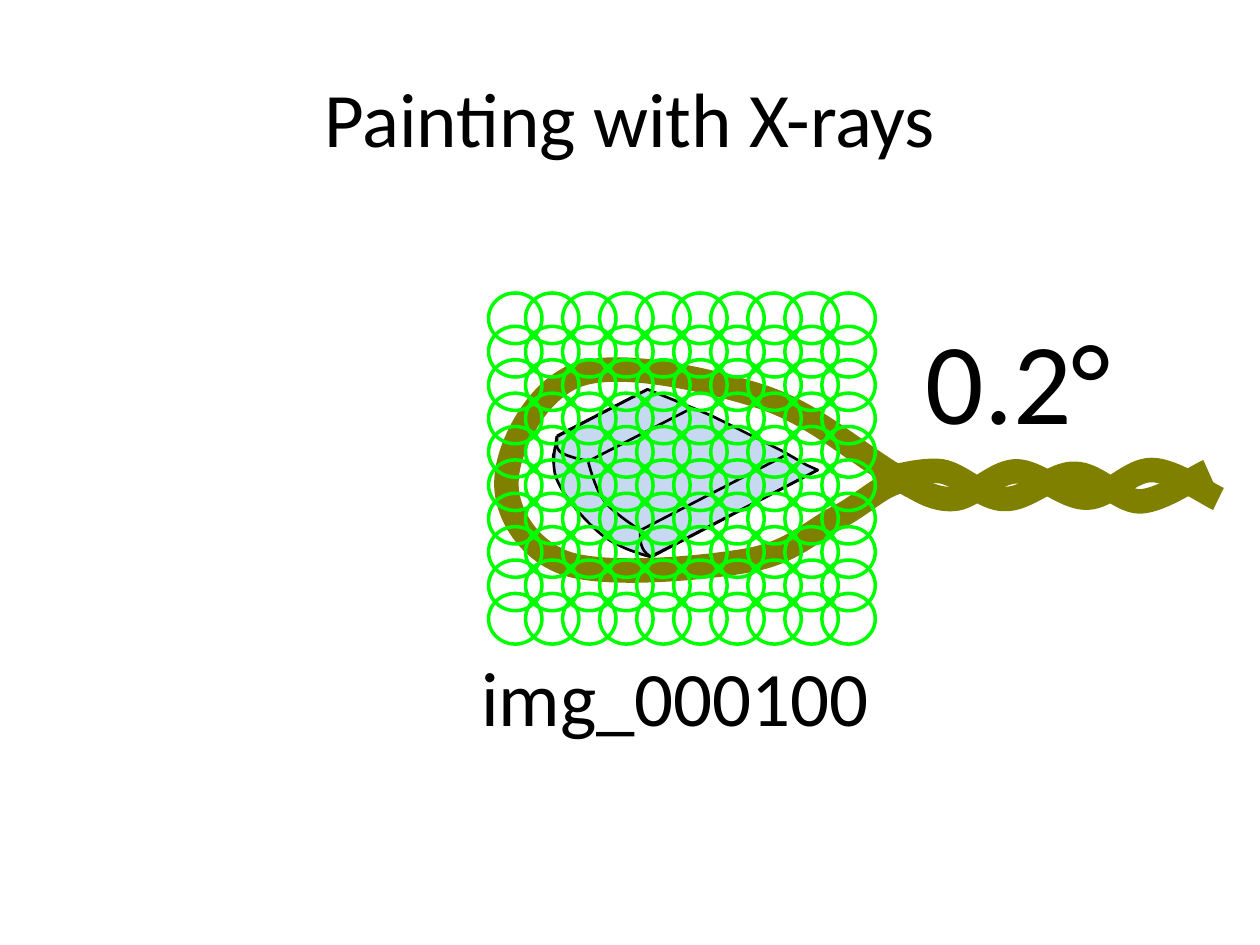
from itertools import product
from math import cos, radians, sin

from lxml.etree import SubElement
from pptx import Presentation
from pptx.dml.color import RGBColor
from pptx.enum.shapes import MSO_CONNECTOR, MSO_SHAPE
from pptx.enum.text import MSO_ANCHOR, MSO_AUTO_SIZE, PP_ALIGN
from pptx.oxml.ns import qn
from pptx.util import Inches, Pt

COLS = 100  # square cells, 100 across and 75 down
BLACK, ICE, ROPE, BEAM = "000000", "C6D9F1", "808000", "00FF00"
TILT, FLIP = 227.7, 180

FACE = [
    (64.9, 37.3), (51.7, 44.2), (51, 44), (49.9, 43.6), (48.7, 43), (47.6, 42.2),
    (46.5, 41.2), (45.3, 39.9), (44.6, 38.8), (44.1, 37.8), (44, 37.1), (43.9, 36.2),
    (44.1, 35.4), (44.3, 34.6), (51.4, 30.9), (54.1, 32), (56.5, 33), (59.1, 34.3),
    (62.1, 35.8), (64, 36.9),
]
EDGES = [
    ((64.9, 37.3), (51.6, 44.2)), ((62.4, 36.1), (50.8, 42.1)),
    ((54.9, 32.4), (46.7, 36.6)), ((51.4, 30.9), (44.2, 34.6)),
]
# A curve is a start point, then two handles and an end point per piece.
RIMS = [
    [(51.7, 44.2), (50.3, 43.8), (49, 43.4), (47.7, 42.4), (46.5, 41.4), (44.9, 39.6),
     (44.3, 38.3), (43.7, 37.1), (44, 35.8), (44.2, 34.6)],
    [(51.7, 44.2), (51.5, 44.1), (51.1, 43.8), (51, 43.5), (50.8, 43.2), (50.8, 42.4),
     (50.8, 42.1)],
    [(50.8, 42.1), (50.3, 41.7), (48.7, 40.7), (48, 39.8), (47.3, 38.9), (46.9, 37.4),
     (46.7, 36.7)],
    [(46.7, 36.6), (46.3, 36.5), (44.8, 36.2), (44.4, 35.8), (44, 35.5), (44.3, 34.8),
     (44.2, 34.6)],
]
LOOP = [
    (72.4, 38.6), (67.6, 35.8), (64.9, 33), (60.5, 31.5), (56.1, 30.1), (49.4, 28.6),
    (46, 29.7), (42.6, 30.8), (40.3, 35.5), (40.2, 38), (40, 40.5), (41.8, 43.6),
    (44.9, 44.7), (48.1, 45.8), (55.7, 45.1), (59.2, 44.5), (62.8, 43.9), (64.3, 42.2),
    (66.4, 41.1), (68.4, 40.1), (69.9, 38.5), (71.4, 38.2), (73, 37.9), (73.2, 38),
    (73.5, 38.2),
]
TWISTS = [
    [(71.1, 37.7), (72.5, 38.7), (74, 39.7), (75.6, 39.6), (77.1, 39.6), (78.8, 37.5),
     (80.6, 37.4), (82.4, 37.4), (84.4, 39.5), (86.2, 39.5), (88, 39.5), (89.6, 37.3),
     (91.4, 37.3), (93.1, 37.3), (95.8, 39.2), (96.7, 39.6)],
    [(69.7, 38.1), (70.5, 38), (73, 37.2), (74.7, 37.4), (76.4, 37.7), (78, 39.6),
     (79.7, 39.6), (81.5, 39.7), (83.6, 37.5), (85.3, 37.6), (87.1, 37.6), (88.8, 39.8),
     (90.5, 39.8), (92.3, 39.7), (94.9, 37.8), (95.9, 37.4)],
]


def tint(code):
    return RGBColor.from_string(code)


def trace(curve, steps=12):
    """Points along a chain of cubic curves."""
    dots = [curve[0]]
    for i in range(0, len(curve) - 1, 3):
        for t in (n / steps for n in range(1, steps + 1)):
            s = 1 - t
            parts = (s ** 3, 3 * s * s * t, 3 * s * t * t, t ** 3)
            dots.append(tuple(
                sum(w * p[axis] for w, p in zip(parts, curve[i:i + 4]))
                for axis in (0, 1)))
    return dots


def spin(dots, turn):
    c, s = cos(radians(turn)), sin(radians(turn))
    return [(x * c - y * s, x * s + y * c) for x, y in dots]


def level(dots, turn, curved):
    """Undo a turn about the middle of the frame the shape will have."""
    flat = spin(dots, -turn)
    mid = [(min(v) + max(v)) / 2 for v in zip(*(trace(flat) if curved else flat))]
    home = spin([mid], turn)[0]
    return [(x + home[0] - mid[0], y + home[1] - mid[1]) for x, y in flat]


def write(frame, text, size=44, font="Calibri", color=BLACK, align=None):
    para = frame.paragraphs[0]
    para.alignment = align
    run = para.add_run()
    run.text = text
    run.font.size, run.font.name = Pt(size), font
    run.font.color.rgb = tint(color)


class Board:
    """The current slide, its cell size and its drawing style."""

    def __init__(self, deck):
        self.slide = deck.slides.add_slide(deck.slide_layouts[5])
        self.cell = deck.slide_width / COLS
        self.group()

    def emu(self, *cells):
        return [round(c * self.cell) for c in cells]

    def group(self):
        """Start a new group for the shapes that follow."""
        self.pen = self.slide.shapes.add_group_shape().shapes

    def style(self, shape, line, width, fill=None):
        shape.shadow.inherit = False
        if fill:
            shape.fill.solid()
            shape.fill.fore_color.rgb = tint(fill)
        else:
            shape.fill.background()
        shape.line.color.rgb, shape.line.width = tint(line), Pt(width)

    def outline(self, dots, turn, line, width, fill=None, curved=True):
        dots = level(dots, turn, curved)
        first, *rest = [self.emu(*d) for d in (trace(dots) if curved else dots)]
        path = self.pen.build_freeform(*first)
        path.add_line_segments(rest, close=not curved)
        shape = path.convert_to_shape()
        if curved:
            self.bend(shape, dots)
        shape.rotation = turn
        self.style(shape, line, width, fill)

    def bend(self, shape, curve):
        """Give the shape true cubic curves inside its frame."""
        track = next(shape.element.iter(qn("a:path")))
        for part in list(track):
            track.remove(part)
        part = SubElement(track, qn("a:moveTo"))
        for i, dot in enumerate(curve):
            if i % 3 == 1:
                part = SubElement(track, qn("a:cubicBezTo"))
            x, y = self.emu(*dot)
            SubElement(part, qn("a:pt"), x=str(x - shape.left), y=str(y - shape.top))

    def edge(self, start, end):
        rule = self.pen.add_connector(
            MSO_CONNECTOR.STRAIGHT, *self.emu(*start, *end))
        rule.line.color.rgb, rule.line.width = tint(BLACK), Pt(1.5)
        SubElement(rule.element.spPr, qn("a:effectLst"))

    def ring(self, x, y, w, h):
        oval = self.pen.add_shape(MSO_SHAPE.OVAL, *self.emu(x, y, w, h))
        self.style(oval, BEAM, 2)

    def label(self, x, y, w, h, text, **form):
        frame = self.slide.shapes.add_textbox(*self.emu(x, y, w, h)).text_frame
        frame.word_wrap = False
        frame.auto_size = MSO_AUTO_SIZE.SHAPE_TO_FIT_TEXT
        write(frame, text, **form)

    def title(self, x, y, w, h, text):
        head = self.slide.shapes.title
        head.left, head.top, head.width, head.height = self.emu(x, y, w, h)
        head.text_frame.vertical_anchor = MSO_ANCHOR.MIDDLE
        write(head.text_frame, text, align=PP_ALIGN.CENTER)


def main():
    deck = Presentation()
    deck.slide_width, deck.slide_height = Inches(10), Inches(7.5)
    board = Board(deck)
    board.title(5, 3, 90, 12.5, "Painting with X-rays")

    # Crystal
    board.outline(FACE, TILT, BLACK, 1.5, fill=ICE, curved=False)
    for start, end in EDGES:
        board.edge(start, end)
    for rim in RIMS:
        board.outline(rim, TILT, BLACK, 1.5, fill=ICE)

    # Loop and its twisted stem
    board.group()
    for strand in (LOOP, *TWISTS):
        board.outline(strand, FLIP, ROPE, 14)

    # Beam positions
    board.group()
    for row, col in product(range(10), repeat=2):
        board.ring(38.77 + 2.94 * col, 23.25 + 2.65 * row, 4.24, 4.02)

    board.label(72.5, 24, 18.6, 12.1, "0.2°", size=66)
    board.label(37.2, 51.1, 36, 8.4, "img_000100")
    deck.save("out.pptx")


if __name__ == "__main__":
    main()
